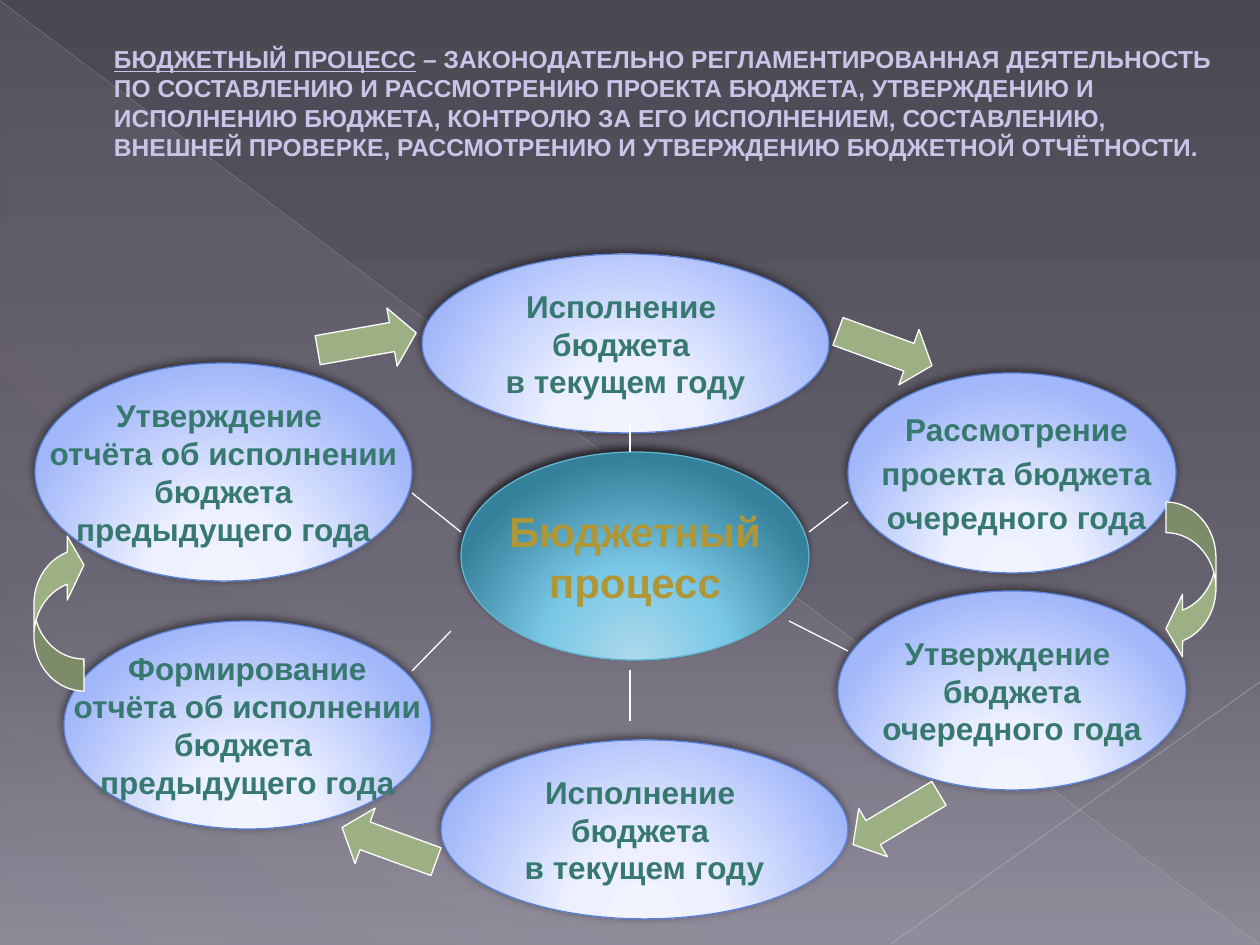
from lxml import etree
from pptx import Presentation
from pptx.dml.color import RGBColor
from pptx.enum.shapes import MSO_CONNECTOR as Connector, MSO_SHAPE as Shape
from pptx.enum.text import MSO_ANCHOR as Anchor, PP_ALIGN as Align
from pptx.oxml.ns import qn
from pptx.util import Pt

EMU_PER_PX = 914400 / 126
FONT = "Arial"
COLORS = {
    "title": "CBC4E9",
    "stage_text": "37796E",
    "stage_line": "5A81DA",
    "center_text": "AF9738",
    "center_line": "62B6D2",
    "arrow": "9CB084",
    "white": "FFFFFF",
    "shadow": "000000",
    "diagonal": "C0BFC2",
    "corner": "C7C6C8",
}
# Gradient stops: position, colour, opacity (all in percent)
BACKGROUND = [(0, "4B4852", 100), (60, "64606D", 100), (100, "8C8896", 100)]
VEIL = [(0, "C9C2D1", 10), (70, "C9C2D1", 8), (100, "C9C2D1", 1)]
STAGE_FILL = [(0, "F1F4FF", 100), (34, "ECF0FF", 100), (100, "A2B7FA", 100)]
CENTER_FILL = [(0, "AED9EC", 100), (46, "79C8E6", 100), (100, "35809A", 100)]

TITLE_TERM = "БЮДЖЕТНЫЙ ПРОЦЕСС"
TITLE_REST = (
    " – ЗАКОНОДАТЕЛЬНО РЕГЛАМЕНТИРОВАННАЯ ДЕЯТЕЛЬНОСТЬ ПО СОСТАВЛЕНИЮ И "
    "РАССМОТРЕНИЮ ПРОЕКТА БЮДЖЕТА, УТВЕРЖДЕНИЮ И ИСПОЛНЕНИЮ БЮДЖЕТА, КОНТРОЛЮ "
    "ЗА ЕГО ИСПОЛНЕНИЕМ, СОСТАВЛЕНИЮ, ВНЕШНЕЙ ПРОВЕРКЕ, РАССМОТРЕНИЮ И "
    "УТВЕРЖДЕНИЮ БЮДЖЕТНОЙ ОТЧЁТНОСТИ."
)
EXECUTION = "Исполнение \nбюджета \nв текущем году"
REVIEW = "Рассмотрение\nпроекта бюджета\nочередного года"
STAGES = [
    ((838, 591, 348, 199), "Утверждение \nбюджета\nочередного года"),
    ((441, 740, 407, 179), EXECUTION),
    ((422, 254, 407, 179), EXECUTION),
    ((35, 363, 377, 218),
     "Утверждение \nотчёта об исполнении\n бюджета \nпредыдущего года"),
    ((64, 621, 367, 208),
     "Формирование\nотчёта об исполнении\nбюджета \nпредыдущего года"),
]
# Kind, box, rotation, adjustments
STRAIGHT = (0.5, 0.416)
ARROWS = [
    (Shape.CURVED_LEFT_ARROW, (1166, 502, 50, 158), 0, (0.613, 1.253, 0.333)),
    (Shape.RIGHT_ARROW, (846, 791, 100, 56), 149.2, STRAIGHT),
    (Shape.RIGHT_ARROW, (317, 312, 100, 59), 350, STRAIGHT),
    (Shape.RIGHT_ARROW, (835, 319, 100, 59), 20, STRAIGHT),
    (Shape.RIGHT_ARROW, (339, 815, 100, 59), 200, STRAIGHT),
    (Shape.CURVED_DOWN_ARROW, (-20, 587, 158, 50), 270, (0.64, 1.279, 0.333)),
]
SPOKES = [
    (630, 670, 630, 721),
    (451, 631, 412, 671),
    (412, 493, 461, 532),
    (630, 423, 630, 452),
    (809, 532, 848, 502),
    (789, 621, 848, 651),
]


def px(value):
    return round(value * EMU_PER_PX)


def box_px(box):
    return [px(value) for value in box]


def rgb(name):
    return RGBColor.from_string(COLORS[name])


def add_node(parent, tag, **attributes):
    values = {key: str(value) for key, value in attributes.items()}
    return etree.SubElement(parent, qn(tag), values)


def set_gradient(owner, properties, stops, angle=None):
    """Linear gradient at an angle, or a round one centred below the shape."""
    owner.fill.background()
    gradient = etree.Element(qn("a:gradFill"), rotWithShape="1")
    stop_list = add_node(gradient, "a:gsLst")
    for position, color, opacity in stops:
        stop = add_node(stop_list, "a:gs", pos=position * 1000)
        color_node = add_node(stop, "a:srgbClr", val=color)
        if opacity < 100:
            add_node(color_node, "a:alpha", val=opacity * 1000)
    if angle is None:
        focus = add_node(gradient, "a:path", path="circle")
        add_node(focus, "a:fillToRect", l=50000, t=155000, r=50000, b=-55000)
    else:
        add_node(gradient, "a:lin", ang=angle * 60000, scaled=0)
    properties.replace(properties.find(qn("a:noFill")), gradient)


def add_shadow(shape, opacity, blur, distance):
    effects = shape._element.spPr.find(qn("a:effectLst"))
    shadow = add_node(effects, "a:outerShdw", blurRad=Pt(blur), dist=Pt(distance),
                      dir=245 * 60000, algn="ctr", rotWithShape=0)
    color = add_node(shadow, "a:srgbClr", val=COLORS["shadow"])
    add_node(color, "a:alpha", val=opacity * 1000)


def add_preset(slide, kind, box):
    shape = slide.shapes.add_shape(kind, *box_px(box))
    shape.shadow.inherit = False
    return shape


def set_line(item, color, width=0.75):
    item.line.color.rgb = rgb(color)
    item.line.width = Pt(width)


def format_font(run, size, color):
    run.font.name = FONT
    run.font.size = Pt(size)
    run.font.bold = True
    run.font.color.rgb = rgb(color)


def add_ellipse(slide, box, text, stops, style, size, shadow):
    shape = add_preset(slide, Shape.OVAL, box)
    set_gradient(shape, shape._element.spPr, stops)
    set_line(shape, f"{style}_line")
    add_shadow(shape, *shadow)
    frame = shape.text_frame
    frame.text = text
    frame.word_wrap = False
    frame.vertical_anchor = Anchor.MIDDLE
    for paragraph in frame.paragraphs:
        paragraph.alignment = Align.CENTER
        format_font(paragraph.runs[0], size, f"{style}_text")
    return shape


def add_stage(slide, box, text):
    return add_ellipse(slide, box, text, STAGE_FILL, "stage", 18, (50, 5, 2))


def add_review_stage(slide):
    shape = add_stage(slide, (848, 373, 328, 200), REVIEW)
    for paragraph in shape.text_frame.paragraphs:
        paragraph.space_before = Pt(3.6)
        properties = paragraph._p.get_or_add_pPr()
        properties.set("marL", str(px(62)))
        properties.set("indent", str(px(-53)))


def add_arrow(slide, kind, box, rotation, adjustments):
    shape = add_preset(slide, kind, box)
    shape.rotation = rotation
    for index, value in enumerate(adjustments):
        shape.adjustments[index] = value
    shape.fill.solid()
    shape.fill.fore_color.rgb = rgb("arrow")
    set_line(shape, "white")


def add_line(slide, ends, color="white", width=0.75, opacity=100):
    line = slide.shapes.add_connector(Connector.STRAIGHT, *box_px(ends))
    set_line(line, color, width)
    properties = line._element.spPr
    if opacity < 100:
        add_node(properties.find(".//" + qn("a:srgbClr")), "a:alpha", val=opacity * 1000)
    add_node(properties, "a:effectLst")


def add_backdrop(slide):
    background = slide.background
    background.fill.background()
    set_gradient(background, slide._element.cSld.bg.bgPr, BACKGROUND, 90)
    veil = add_preset(slide, Shape.RIGHT_TRIANGLE, (1, 3, 1258, 942))
    set_gradient(veil, veil._element.spPr, VEIL, 133)
    veil.line.fill.background()
    add_line(slide, (0, 1, 1259, 944), "diagonal", 0.39, 35)
    add_line(slide, (1260, 682, 891, 944), "corner", 0.47, 45)


def add_title(slide):
    frame = slide.shapes.add_textbox(*box_px((114, 44, 1105, 120))).text_frame
    frame.word_wrap = True
    frame.margin_left = frame.margin_right = frame.margin_top = frame.margin_bottom = 0
    paragraph = frame.paragraphs[0]
    for text, underlined in ((TITLE_TERM, True), (TITLE_REST, False)):
        run = paragraph.add_run()
        run.text = text
        format_font(run, 14, "title")
        run.font.underline = underlined


def main():
    presentation = Presentation()
    presentation.slide_width, presentation.slide_height = px(1260), px(945)
    slide = presentation.slides.add_slide(presentation.slide_layouts[6])
    add_backdrop(slide)
    add_title(slide)
    # Stages around the central process
    add_review_stage(slide)
    for box, text in STAGES:
        add_stage(slide, box, text)
    add_ellipse(slide, (461, 452, 348, 208), "Бюджетный\nпроцесс",
                CENTER_FILL, "center", 24, (60, 4, 3))
    # Cycle arrows and spokes
    for arrow in ARROWS:
        add_arrow(slide, *arrow)
    for ends in SPOKES:
        add_line(slide, ends)
    presentation.save("out.pptx")


if __name__ == "__main__":
    main()
